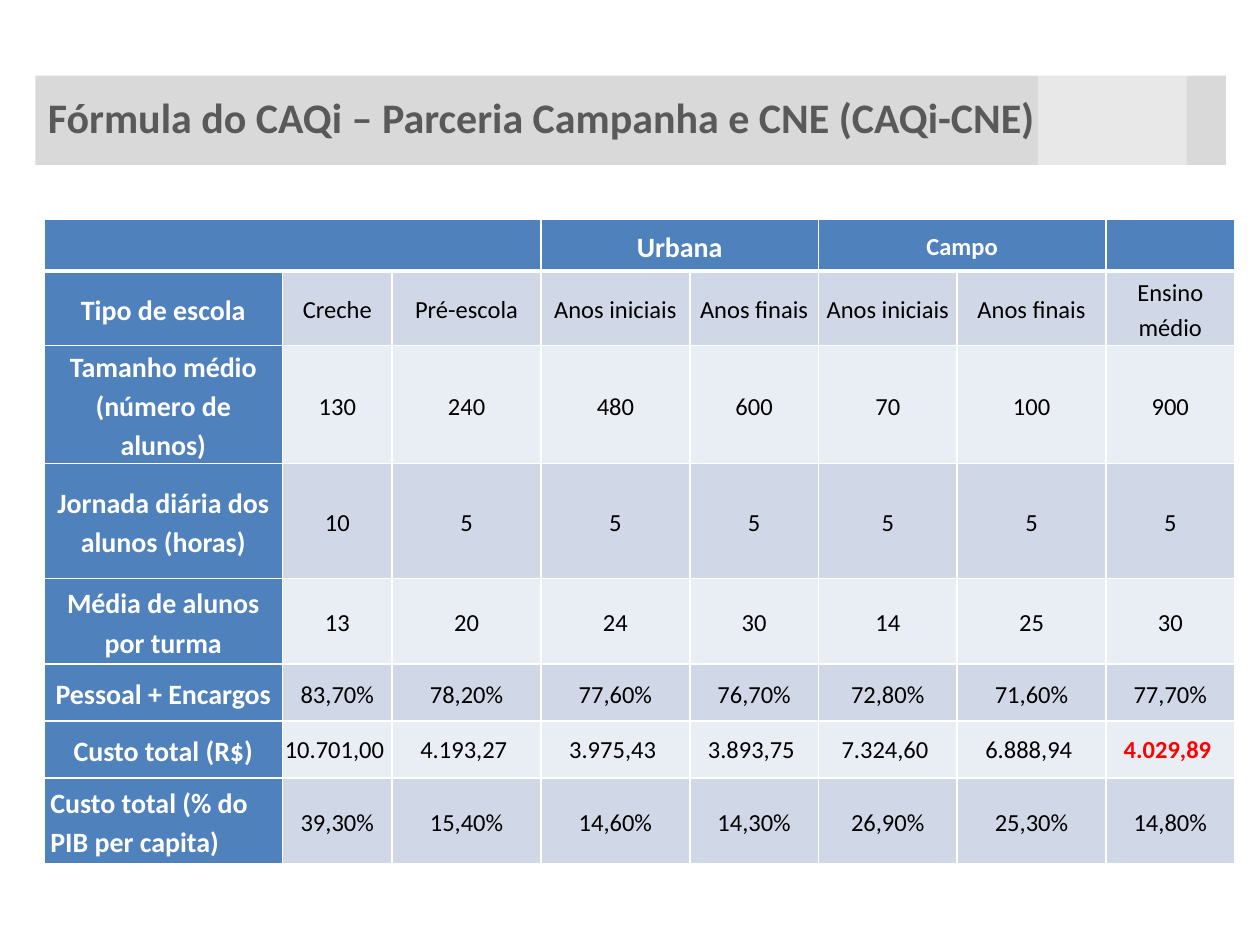
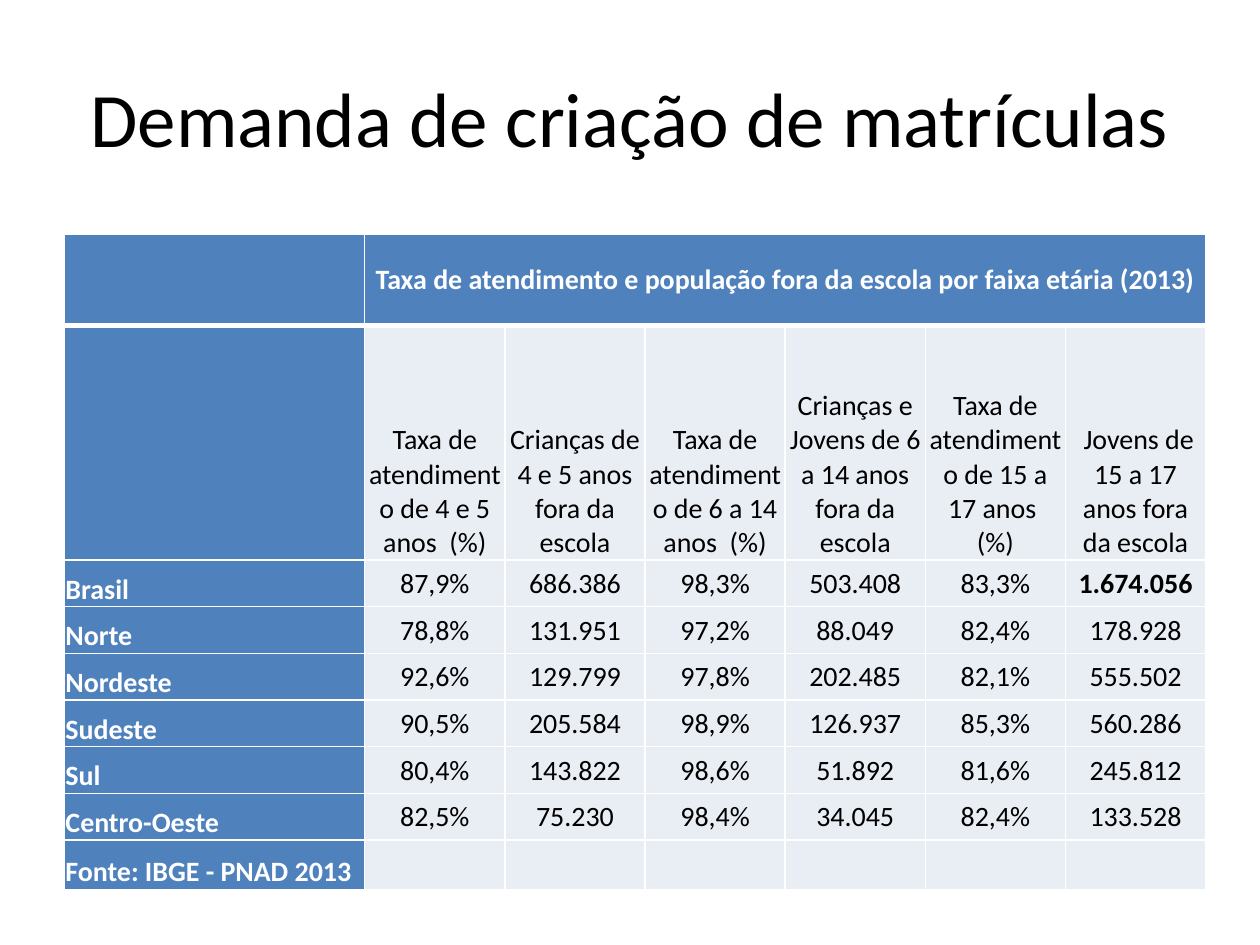
import dataclasses

import lxml.etree
import pptx
import pptx.dml.color
import pptx.enum.shapes
import pptx.enum.text
import pptx.oxml.ns
import pptx.util

ALIGN = pptx.enum.text.PP_ALIGN
ANCHOR = pptx.enum.text.MSO_ANCHOR
qn = pptx.oxml.ns.qn
SLIDE_WIDTH, SLIDE_HEIGHT = 10, 7.5


@dataclasses.dataclass(frozen=True)
class Theme:
    font: str = "Calibri"
    header: str = "4F81BD"
    band_dark: str = "D0D8E8"
    band_light: str = "E9EDF4"
    white: str = "FFFFFF"
    black: str = "000000"
    highlight: str = "FF0000"
    title_band: str = "D9D9D9"
    title_gray: str = "595959"
    title_size: int = 44
    band_title_size: int = 24
    label_size: int = 16
    value_size: int = 14
    rule: int = 1
    header_rule: int = 3


THEME = Theme()
# Cell insets: left, top, right, bottom
WIDE_INSETS = (0.05, 0, 0.05, 0)
TIGHT_INSETS = (0.01, 0.01, 0.01, 0)


def rgb(color):
    return pptx.dml.color.RGBColor.from_string(color)


def set_all(target, values):
    for name, value in values.items():
        setattr(target, name, value)


def set_box(box):
    return [pptx.util.Inches(length) for length in box]


def set_insets(target, insets):
    sides = ("left", "top", "right", "bottom")
    set_all(target, {f"margin_{side}": pptx.util.Inches(inset)
                     for side, inset in zip(sides, insets)})


def write(paragraph, text, size, color, bold=False, align=ALIGN.CENTER, spacing=1.0):
    set_all(paragraph, {"alignment": align, "line_spacing": spacing})
    run = paragraph.add_run()
    run.text = text
    set_all(run.font, {"name": THEME.font, "size": pptx.util.Pt(size), "bold": bold})
    run.font.color.rgb = rgb(color)


# Titles
def add_title(slide, box, text, anchor, **style):
    title = slide.shapes.title
    set_all(title, dict(zip(("left", "top", "width", "height"), set_box(box))))
    set_all(title.text_frame, {"word_wrap": True, "vertical_anchor": anchor,
                               "auto_size": pptx.enum.text.MSO_AUTO_SIZE.NONE})
    write(title.text_frame.paragraphs[0], text, **style)
    return title


def add_rectangle(slide, box, color, opacity=100):
    shape = slide.shapes.add_shape(pptx.enum.shapes.MSO_SHAPE.RECTANGLE, *set_box(box))
    shape.shadow.inherit = False
    shape.fill.solid()
    shape.fill.fore_color.rgb = rgb(color)
    shape.line.fill.background()
    if opacity < 100:
        color_element = shape.element.spPr.find(".//" + qn("a:srgbClr"))
        lxml.etree.SubElement(color_element, qn("a:alpha"), val=str(opacity * 1000))


def add_band_title(slide, box, text):
    left, top, width, height = box
    add_rectangle(slide, box, THEME.title_band)
    # Translucent panel that crosses the band
    add_rectangle(slide, (left + width * 0.842, 0.05, width * 0.125, 1.59),
                  THEME.white, opacity=41)
    title = add_title(slide, (left, top + 0.08, width * 0.867, height * 0.7), text,
                      ANCHOR.TOP, size=THEME.band_title_size, color=THEME.title_gray,
                      bold=True, align=ALIGN.LEFT)
    slide.shapes.element.append(title.element)  # bring the title to the front


# Tables
def add_borders(cell, widths):
    properties = cell._tc.get_or_add_tcPr()
    for side, width in widths.items():
        line = lxml.etree.SubElement(properties, qn(f"a:ln{side}"),
                                     w=str(pptx.util.Pt(width)))
        fill = lxml.etree.SubElement(line, qn("a:solidFill"))
        lxml.etree.SubElement(fill, qn("a:srgbClr"), val=THEME.white)


def add_grid(slide, box, column_shares, row_shares, spans):
    """Add an empty ruled table; spans lists (first, last) columns of the header row."""
    width, height = box[2:]
    table = slide.shapes.add_table(len(row_shares), len(column_shares), *set_box(box)).table
    set_all(table, {"first_row": False, "horz_banding": False})
    for column, share in zip(table.columns, column_shares):
        column.width = pptx.util.Inches(width * share / sum(column_shares))
    for row, share in zip(table.rows, row_shares):
        row.height = pptx.util.Inches(height * share / sum(row_shares))
    for row_index, row in enumerate(table.rows):
        widths = dict.fromkeys("LRTB", THEME.rule)
        if row_index == 0:
            widths["B"] = THEME.header_rule
        elif row_index == 1:
            del widths["T"]  # the thick header rule lies here
        for cell in row.cells:
            add_borders(cell, widths)
    for first, last in spans:
        table.cell(0, first).merge(table.cell(0, last))
    return table


def fill_cell(cell, fill, text="", insets=TIGHT_INSETS, anchor=ANCHOR.MIDDLE, **style):
    cell.fill.solid()
    cell.fill.fore_color.rgb = rgb(fill)
    cell.vertical_anchor = anchor
    set_insets(cell, insets)
    if text:
        write(cell.text_frame.paragraphs[0], text, **style)


def add_cost_table(slide, box):
    groups = {3: ("Urbana", THEME.label_size), 5: ("Campo", THEME.value_size)}
    rows = [
        ("Tipo de escola", "Creche", "Pré-escola", "Anos iniciais", "Anos finais",
         "Anos iniciais", "Anos finais", "Ensino médio"),
        ("Tamanho médio (número de alunos)", "130", "240", "480", "600", "70", "100", "900"),
        ("Jornada diária dos alunos (horas)", "10", "5", "5", "5", "5", "5", "5"),
        ("Média de alunos por turma", "13", "20", "24", "30", "14", "25", "30"),
        ("Pessoal + Encargos", "83,70%", "78,20%", "77,60%", "76,70%", "72,80%", "71,60%",
         "77,70%"),
        ("Custo total (R$)", "10.701,00 ", "4.193,27 ", "3.975,43 ", "3.893,75 ",
         "7.324,60 ", "6.888,94 ", "4.029,89 "),
        ("Custo total (% do PIB per capita)", "39,30%", "15,40%", "14,60%", "14,30%",
         "26,90%", "25,30%", "14,80%"),
    ]
    table = add_grid(slide, box, (1.89, 0.87, 1.18, 1.18, 1.02, 1.1, 1.18, 1.02),
                     (0.41, 0.59, 0.91, 0.91, 0.68, 0.45, 0.45, 0.68),
                     spans=((0, 2), (3, 4), (5, 6)))
    label = {"fill": THEME.header, "insets": WIDE_INSETS, "color": THEME.white,
             "bold": True, "spacing": 1.15}
    # School groups
    for column in range(len(table.columns)):
        text, size = groups.get(column, ("", THEME.label_size))
        fill_cell(table.cell(0, column), text=text, size=size, **label)
    # Row labels and values
    for row_index, (name, *values) in enumerate(rows, start=1):
        last_row = row_index == len(rows)
        fill_cell(table.cell(row_index, 0), text=name, size=THEME.label_size,
                  align=ALIGN.LEFT if last_row else ALIGN.CENTER, **label)
        money = name == "Custo total (R$)"
        for column, value in enumerate(values, start=1):
            highlighted = money and column == len(values)
            fill_cell(table.cell(row_index, column),
                      THEME.band_dark if row_index % 2 else THEME.band_light, value,
                      insets=TIGHT_INSETS if money else WIDE_INSETS,
                      size=THEME.value_size, bold=highlighted,
                      color=THEME.highlight if highlighted else THEME.black,
                      spacing=1.0 if money else 1.15)


def add_enrolment_table(slide, box):
    heading = "Taxa de atendimento e população fora da escola por faixa etária (2013)"
    rows = [
        ("", "Taxa de atendimento de 4 e 5 anos  (%)", "Crianças de 4 e 5 anos fora da escola",
         "Taxa de atendimento de 6 a 14 anos  (%)",
         "Crianças e Jovens de 6 a 14 anos fora da escola",
         "Taxa de atendimento de 15 a 17 anos  (%)", " Jovens de 15 a 17 anos fora da escola"),
        ("Brasil", "87,9%", "686.386", "98,3%", "503.408", "83,3%", "1.674.056"),
        ("Norte", "78,8%", "131.951", "97,2%", "88.049", "82,4%", "178.928"),
        ("Nordeste", "92,6%", "129.799", "97,8%", "202.485", "82,1%", "555.502"),
        ("Sudeste", "90,5%", "205.584", "98,9%", "126.937", "85,3%", "560.286"),
        ("Sul", "80,4%", "143.822", "98,6%", "51.892", "81,6%", "245.812"),
        ("Centro-Oeste", "82,5%", "75.230", "98,4%", "34.045", "82,4%", "133.528"),
        ("Fonte: IBGE - PNAD 2013", "", "", "", "", "", ""),
    ]
    table = add_grid(slide, box, [2.38] + [1.11] * 6, [0.72, 1.86] + [0.37] * 6 + [0.39],
                     spans=((1, 6),))
    label = {"fill": THEME.header, "size": THEME.label_size, "color": THEME.white,
             "bold": True}
    # Heading
    for column in range(len(table.columns)):
        fill_cell(table.cell(0, column), text=heading if column == 1 else "", **label)
    # Regions and values
    for row_index, (region, *values) in enumerate(rows, start=1):
        fill_cell(table.cell(row_index, 0), text=region, anchor=ANCHOR.BOTTOM,
                  align=ALIGN.LEFT, **label)
        for column, value in enumerate(values, start=1):
            fill_cell(table.cell(row_index, column), THEME.band_light, value,
                      anchor=ANCHOR.BOTTOM if row_index == 1 else ANCHOR.MIDDLE,
                      size=THEME.label_size, color=THEME.black,
                      bold=region == "Brasil" and column == len(values))


# Slides
def add_slide(presentation):
    return presentation.slides.add_slide(presentation.slide_layouts.get_by_name("Title Only"))


def build_cost_slide(presentation):
    slide = add_slide(presentation)
    add_band_title(slide, (0.28, 0.6, 9.45, 0.71),
                   "Fórmula do CAQi – Parceria Campanha e CNE (CAQi-CNE)")
    add_cost_table(slide, (0.35, 1.74, 9.45, 5.09))


def build_enrolment_slide(presentation):
    slide = add_slide(presentation)
    add_title(slide, (SLIDE_WIDTH * 0.05, SLIDE_HEIGHT * 0.04, SLIDE_WIDTH * 0.9, 1.25),
              "Demanda de criação de matrículas", ANCHOR.MIDDLE,
              size=THEME.title_size, color=THEME.black)
    add_enrolment_table(slide, (0.51, 1.86, 9.06, 5.2))


def main():
    presentation = pptx.Presentation()
    set_all(presentation, {"slide_width": pptx.util.Inches(SLIDE_WIDTH),
                           "slide_height": pptx.util.Inches(SLIDE_HEIGHT)})
    build_cost_slide(presentation)
    build_enrolment_slide(presentation)
    presentation.save("out.pptx")


if __name__ == "__main__":
    main()
